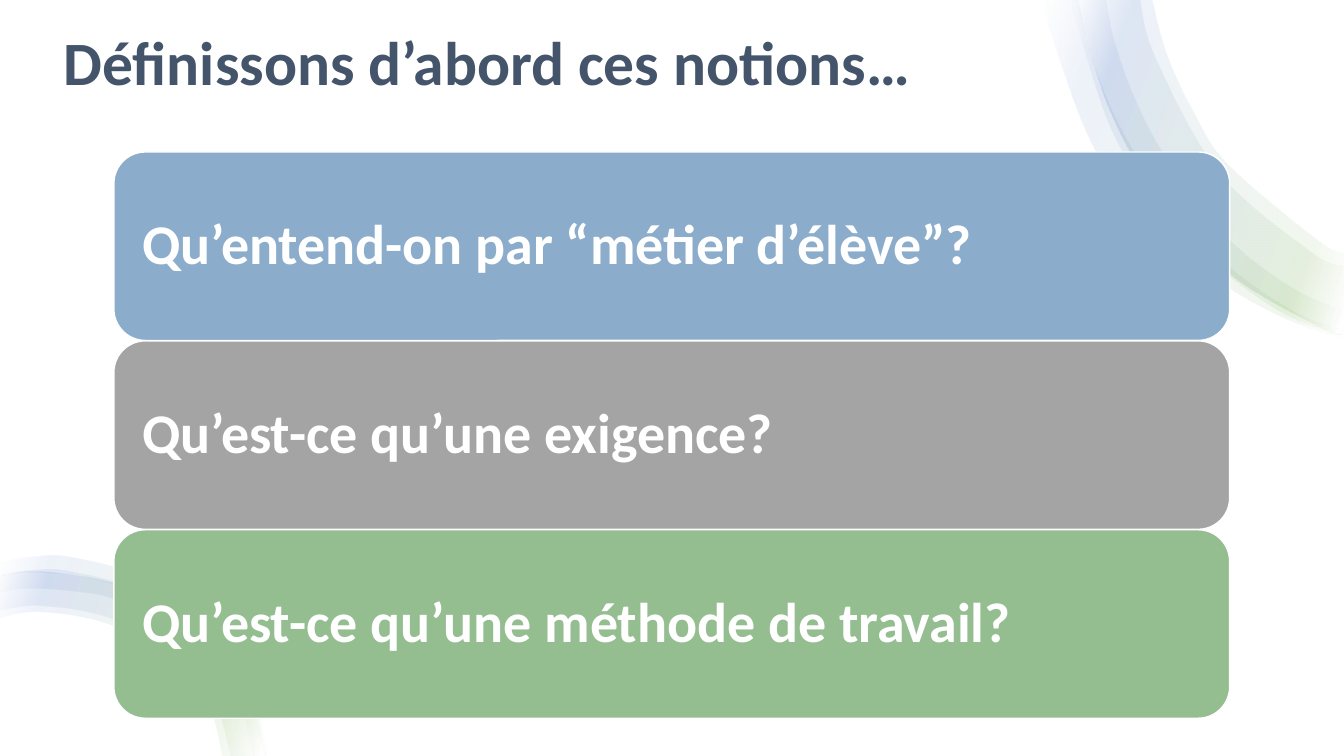
"""Builds a slide with three questions on rounded bars, between two curved ribbons."""
from lxml import etree
from pptx import Presentation
from pptx.dml.color import RGBColor
from pptx.enum.shapes import MSO_SHAPE
from pptx.enum.text import MSO_ANCHOR, PP_ALIGN
from pptx.oxml import parse_xml
from pptx.oxml.ns import nsdecls, qn
from pptx.util import Cm, Pt

ROUNDED = MSO_SHAPE.ROUNDED_RECTANGLE
MIDDLE = MSO_ANCHOR.MIDDLE
LEFT = PP_ALIGN.LEFT

COLORS = {
    "white": "FFFFFF", "title": "44546A", "ribbon_blue": "4472C4", "ribbon_green": "70AD47",
    "blue": "8BADCB", "gray": "A4A4A4", "green": "94BE90",
}
RIBBON_STOPS = [(0, "white"), (15, "ribbon_blue"), (84, "ribbon_green"), (98, "white"), (100, "white")]
RIBBON_ANGLE = 20
RIBBON_OPACITY = 9
RIBBON_UNIT = Cm(2.54)

TOP_OUTER = [(13.33, 3.32), (13.09, 3.24), (12.23, 2.74), (11.52, 2), (11, 1.07), (10.68, 0)]
BOTTOM_OUTER = [(2.63, 7.5), (2.37, 6.69), (1.85, 6.16), (1.17, 5.8), (0.4, 5.67), (0, 5.72)]
RIBBONS = [
    ([(13.33, 3.35), (12.82, 3.19), (12.21, 2.87), (11.65, 2.45), (11.16, 1.92), (10.78, 1.31),
      (10.41, 0.26), (10.37, 0)],
     [(10.7, 0), (10.82, 0.52), (11.06, 1.15), (11.4, 1.73), (11.81, 2.27), (12.3, 2.73),
      (12.86, 3.1), (13.33, 3.28)]),
    (TOP_OUTER, [(11.43, 0), (11.58, 0.55), (11.85, 1.13), (12.19, 1.64), (13.07, 2.38), (13.33, 2.51)]),
    ([(13.33, 3.33), (12.79, 3.14), (12.23, 2.77), (11.73, 2.33), (11.32, 1.79), (10.99, 1.19),
      (10.68, 0.2), (10.65, 0)],
     [(10.98, 0), (11.07, 0.44), (11.29, 1.04), (11.6, 1.62), (11.95, 2.11), (12.39, 2.55),
      (12.9, 2.9), (13.33, 3.08)]),
    (TOP_OUTER, [(11.31, 0), (11.47, 0.59), (12.1, 1.72), (13.01, 2.5), (13.33, 2.64)]),
    (BOTTOM_OUTER, [(0, 6.13), (0.4, 6.07), (1.07, 6.19), (1.66, 6.52), (2.06, 7), (2.2, 7.5)]),
    (BOTTOM_OUTER, [(0, 6.06), (0.4, 6.01), (1.09, 6.13), (1.7, 6.47), (2.12, 6.97), (2.28, 7.5)]),
    ([(2.63, 7.5), (2.47, 6.85), (2.03, 6.27), (1.42, 5.87), (0.69, 5.67), (0.31, 5.66), (0, 5.71)],
     [(0, 5.88), (0.33, 5.84), (1.01, 5.91), (1.5, 6.1), (1.92, 6.39), (2.34, 6.91), (2.51, 7.5)]),
    ([(2.64, 7.5), (2.5, 6.87), (2.1, 6.23), (1.48, 5.75), (0.71, 5.53), (0.31, 5.53), (0, 5.59)],
     [(0, 5.72), (0.32, 5.68), (0.87, 5.73), (1.39, 5.91), (2, 6.31), (2.45, 6.89), (2.62, 7.5)]),
]
QUESTIONS = [
    ("Qu’entend-on par “métier d’élève”?", "blue"),
    ("Qu’est-ce qu’une exigence?", "gray"),
    ("Qu’est-ce qu’une méthode de travail?", "green"),
]


def curve_segments(points):
    """Return two control points and an end point for each smooth segment."""
    padded = [points[0], *points, points[-1]]
    segments = []
    for before, start, end, after in zip(padded, padded[1:], padded[2:], padded[3:]):
        first = tuple(b + (c - a) / 6 for a, b, c in zip(before, start, end))
        second = tuple(c - (d - b) / 6 for b, c, d in zip(start, end, after))
        segments.append((first, second, end))
    return segments


def write_text(shape, text, size, color, inset):
    """Write one bold, vertically centred line into a shape."""
    frame = shape.text_frame
    frame_format = {"word_wrap": True, "vertical_anchor": MIDDLE,
                    "margin_left": Cm(inset), "margin_right": Cm(inset)}
    for name, value in frame_format.items():
        setattr(frame, name, value)
    paragraph = frame.paragraphs[0]
    paragraph.text = text
    paragraph.alignment = LEFT
    paragraph.line_spacing = 0.9
    for name, value in {"name": "Calibri", "size": Pt(size), "bold": True}.items():
        setattr(paragraph.font, name, value)
    paragraph.font.color.rgb = RGBColor.from_string(COLORS[color])


presentation = Presentation()
presentation.slide_width = Cm(33.87)
presentation.slide_height = Cm(19.05)
slide = presentation.slides.add_slide(presentation.slide_layouts[6])

for edges in RIBBONS:
    outer, inner = [[(x * RIBBON_UNIT, y * RIBBON_UNIT) for x, y in edge] for edge in edges]
    builder = slide.shapes.build_freeform(*outer[0])
    builder.add_line_segments(outer[1:] + inner, close=True)
    ribbon = builder.convert_to_shape()
    properties = ribbon.element.spPr
    lines = list(properties.iter(qn("a:lnTo")))
    del lines[len(outer) - 1]
    for line, segment in zip(lines, curve_segments(outer) + curve_segments(inner)):
        curve = etree.Element(qn("a:cubicBezTo"))
        for x, y in segment:
            etree.SubElement(curve, qn("a:pt"), x=str(round(x - ribbon.left)), y=str(round(y - ribbon.top)))
        line.getparent().replace(line, curve)
    ribbon.shadow.inherit = False
    ribbon.line.fill.background()
    ribbon.fill.gradient()
    gradient = parse_xml(f'<a:gradFill {nsdecls("a")} rotWithShape="1"><a:gsLst/></a:gradFill>')
    for position, color in RIBBON_STOPS:
        stop = etree.SubElement(gradient[0], qn("a:gs"), pos=str(position * 1000))
        stop_color = etree.SubElement(stop, qn("a:srgbClr"), val=COLORS[color])
        etree.SubElement(stop_color, qn("a:alpha"), val=str(RIBBON_OPACITY * 1000))
    etree.SubElement(gradient, qn("a:lin"), ang=str(RIBBON_ANGLE * 60000), scaled="0")
    properties.replace(properties.find(qn("a:gradFill")), gradient)

title = slide.shapes.add_textbox(Cm(1.35), Cm(0), Cm(29.39), Cm(3.3))
write_text(title, "Définissons d’abord ces notions…", 44, "title", 0.25)

for index, (question, color) in enumerate(QUESTIONS):
    bar = slide.shapes.add_shape(ROUNDED, Cm(2.87), Cm(3.83 + index * 4.76), Cm(28.12), Cm(4.75))
    bar.adjustments[0] = 0.167
    bar.shadow.inherit = False
    bar.fill.solid()
    bar.fill.fore_color.rgb = RGBColor.from_string(COLORS[color])
    bar.line.color.rgb = RGBColor.from_string(COLORS["white"])
    bar.line.width = Pt(1)
    write_text(bar, question, 40, "white", 0.48)

presentation.save("out.pptx")
